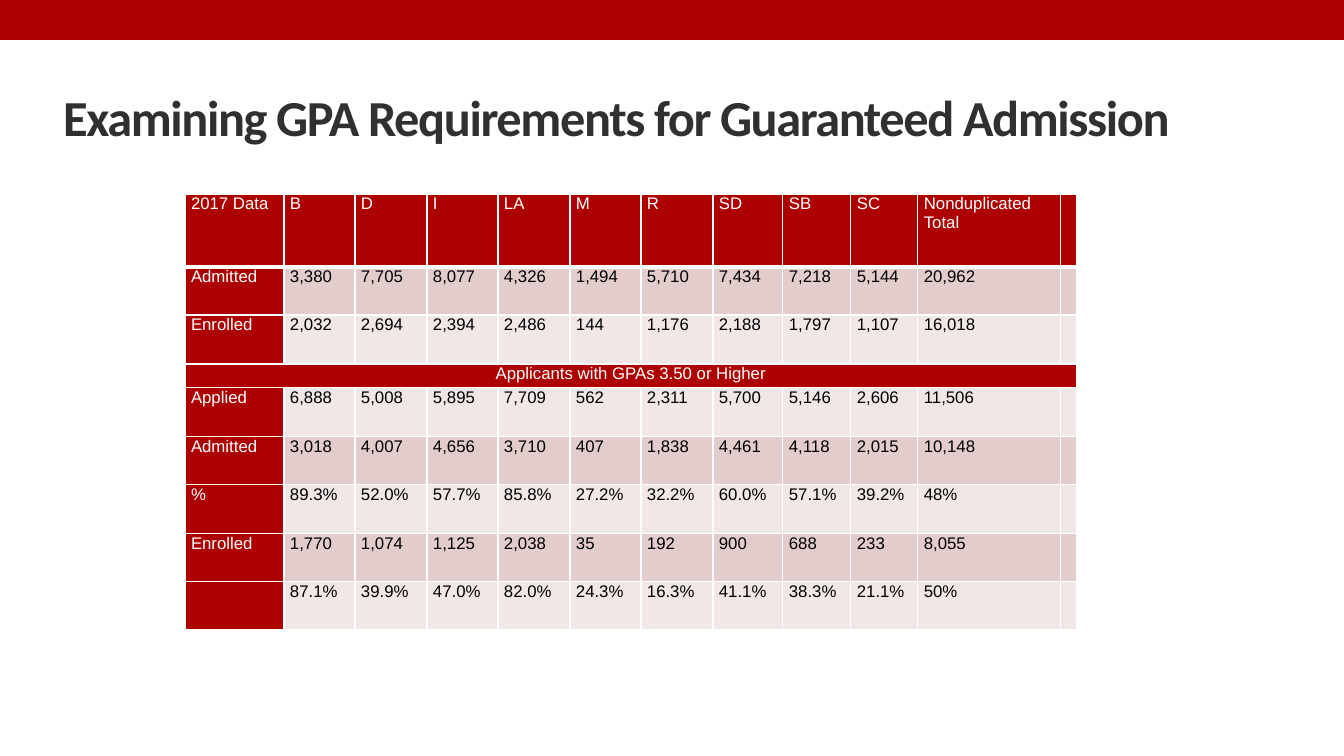
import pptx
import pptx.util
import pptx.dml.color
import pptx.enum.shapes
import pptx.enum.text
import pptx.oxml.ns
from lxml import etree

PX = 914400 / 100.8
RED = pptx.dml.color.RGBColor(0xAD, 0x01, 0x01)
DARK_BAND = pptx.dml.color.RGBColor(0xE3, 0xCC, 0xCC)
LIGHT_BAND = pptx.dml.color.RGBColor(0xF1, 0xE7, 0xE7)
WHITE = pptx.dml.color.RGBColor(0xFF, 0xFF, 0xFF)
BLACK = pptx.dml.color.RGBColor(0, 0, 0)
TITLE_GREY = pptx.dml.color.RGBColor(0x30, 0x30, 0x30)

COLUMN_WIDTHS = [99, 71, 72, 71, 72, 71, 72, 70, 68, 67, 143, 13]
ROW_HEIGHTS = [73, 48, 49, 24, 49, 48, 49, 48, 48]
SECTION_ROW = 3
ROWS = [
    ["2017 Data", "B", "D", "I", "LA", "M", "R", "SD", "SB", "SC", "Nonduplicated\nTotal", ""],
    ["Admitted", "3,380", "7,705", "8,077", "4,326", "1,494", "5,710", "7,434", "7,218", "5,144", "20,962", ""],
    ["Enrolled", "2,032", "2,694", "2,394", "2,486", "144", "1,176", "2,188", "1,797", "1,107", "16,018", ""],
    ["Applicants with GPAs 3.50 or Higher"] + [""] * 11,
    ["Applied", "6,888", "5,008", "5,895", "7,709", "562", "2,311", "5,700", "5,146", "2,606", "11,506", ""],
    ["Admitted", "3,018", "4,007", "4,656", "3,710", "407", "1,838", "4,461", "4,118", "2,015", "10,148", ""],
    ["%", "89.3%", "52.0%", "57.7%", "85.8%", "27.2%", "32.2%", "60.0%", "57.1%", "39.2%", "48%", ""],
    ["Enrolled", "1,770", "1,074", "1,125", "2,038", "35", "192", "900", "688", "233", "8,055", ""],
    ["", "87.1%", "39.9%", "47.0%", "82.0%", "24.3%", "16.3%", "41.1%", "38.3%", "21.1%", "50%", ""],
]


def px(n):
    return pptx.util.Emu(round(n * PX))


def add_top_bar(s, x, y, w, h):
    bar = s.shapes.add_shape(pptx.enum.shapes.MSO_SHAPE.RECTANGLE, px(x), px(y), px(w), px(h))
    bar.shadow.inherit = False
    bar.fill.solid()
    bar.fill.fore_color.rgb = RED
    bar.line.fill.background()


def set_title(s, text, x, y, w, h):
    sp = s.shapes.title
    sp.left, sp.top, sp.width, sp.height = px(x), px(y), px(w), px(h)
    tf = sp.text_frame
    tf.text = text
    tf.word_wrap = True
    tf.auto_size = pptx.enum.text.MSO_AUTO_SIZE.NONE
    tf.vertical_anchor = pptx.enum.text.MSO_ANCHOR.MIDDLE
    p = tf.paragraphs[0]
    p.alignment = pptx.enum.text.PP_ALIGN.LEFT
    r = p.runs[0]
    r.font.name, r.font.size, r.font.bold = "Calibri", pptx.util.Pt(36), True
    r.font.color.rgb = TITLE_GREY
    r.font._element.set("spc", "-100")


def add_borders(cell, bottom):
    """White lines on all four sides; widths in points."""
    tc_pr = cell._tc.get_or_add_tcPr()
    for side, width in (("L", 1), ("R", 1), ("T", 1), ("B", bottom)):
        ln = etree.SubElement(tc_pr, pptx.oxml.ns.qn(f"a:ln{side}"), w=str(pptx.util.Pt(width)))
        fill = etree.SubElement(ln, pptx.oxml.ns.qn("a:solidFill"))
        etree.SubElement(fill, pptx.oxml.ns.qn("a:srgbClr"), val=str(WHITE))


def format_cell(cell, text, fill, color, bottom):
    cell.text = text
    cell.margin_left = cell.margin_right = px(6)
    cell.margin_top = cell.margin_bottom = 0
    add_borders(cell, bottom)
    cell.fill.solid()
    cell.fill.fore_color.rgb = fill
    for p in cell.text_frame.paragraphs:
        if not p.runs:
            p._p.get_or_add_endParaRPr().set("sz", "1200")
        for r in p.runs:
            r.font.name, r.font.size, r.font.bold = "Arial", pptx.util.Pt(12), False
            r.font.color.rgb = color


def add_admission_table(s, x, y):
    frame = s.shapes.add_table(len(ROWS), len(COLUMN_WIDTHS), px(x), px(y),
                               px(sum(COLUMN_WIDTHS)), px(sum(ROW_HEIGHTS)))
    table = frame.table
    table.first_row = table.horz_banding = False
    for column, width in zip(table.columns, COLUMN_WIDTHS):
        column.width = px(width)
    for row, height in zip(table.rows, ROW_HEIGHTS):
        row.height = px(height)
    for i, values in enumerate(ROWS):
        for j, text in enumerate(values):
            is_heading = i in (0, SECTION_ROW) or j == 0
            band = DARK_BAND if i % 2 else LIGHT_BAND
            format_cell(table.cell(i, j), text, RED if is_heading else band,
                        WHITE if is_heading else BLACK, 3 if i == 0 else 1)
    section = table.cell(SECTION_ROW, 0)
    section.merge(table.cell(SECTION_ROW, len(COLUMN_WIDTHS) - 1))
    section.text_frame.paragraphs[0].alignment = pptx.enum.text.PP_ALIGN.CENTER


def main():
    prs = pptx.Presentation()
    prs.slide_width, prs.slide_height = px(1344), px(756)
    s = prs.slides.add_slide(prs.slide_layouts[5])
    add_top_bar(s, 0, 0, 1344, 40)
    set_title(s, "Examining GPA Requirements for Guaranteed Admission", 53, 58, 1237, 116)
    add_admission_table(s, 185, 194)
    prs.save("out.pptx")


if __name__ == "__main__":
    main()
